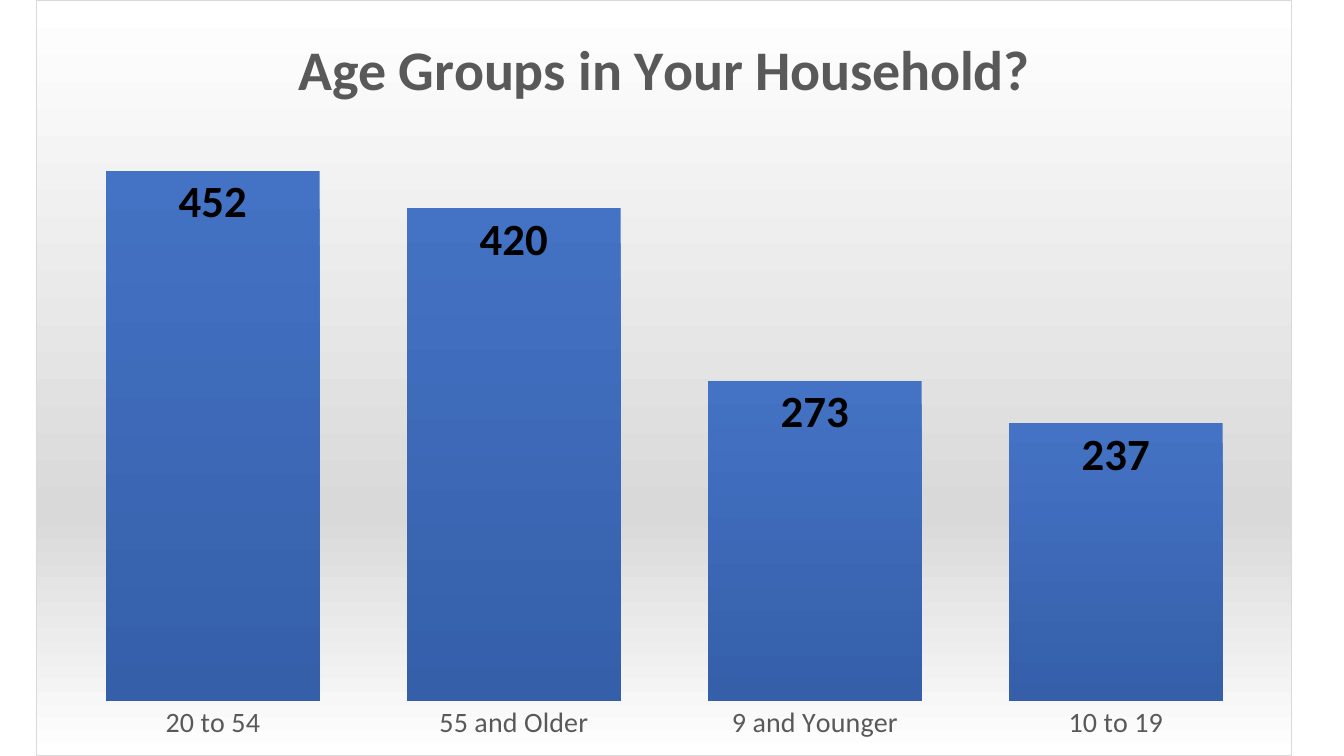
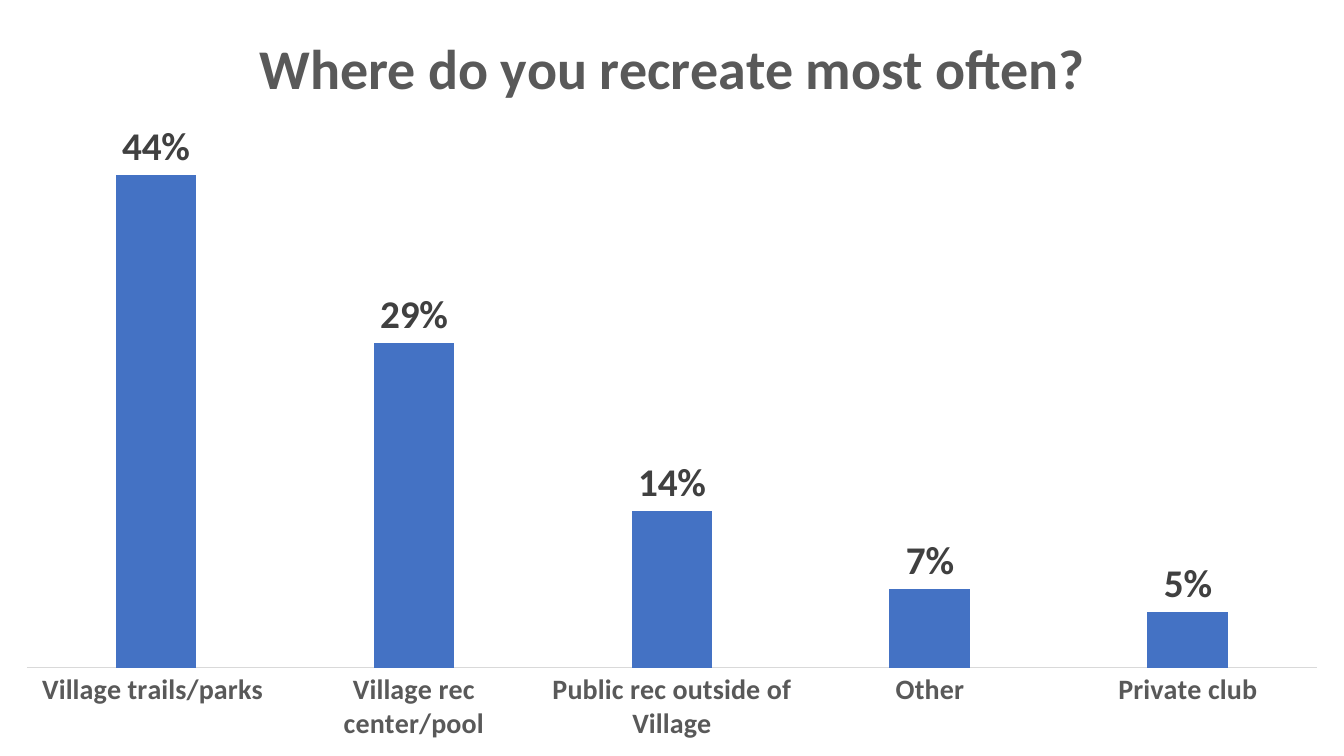
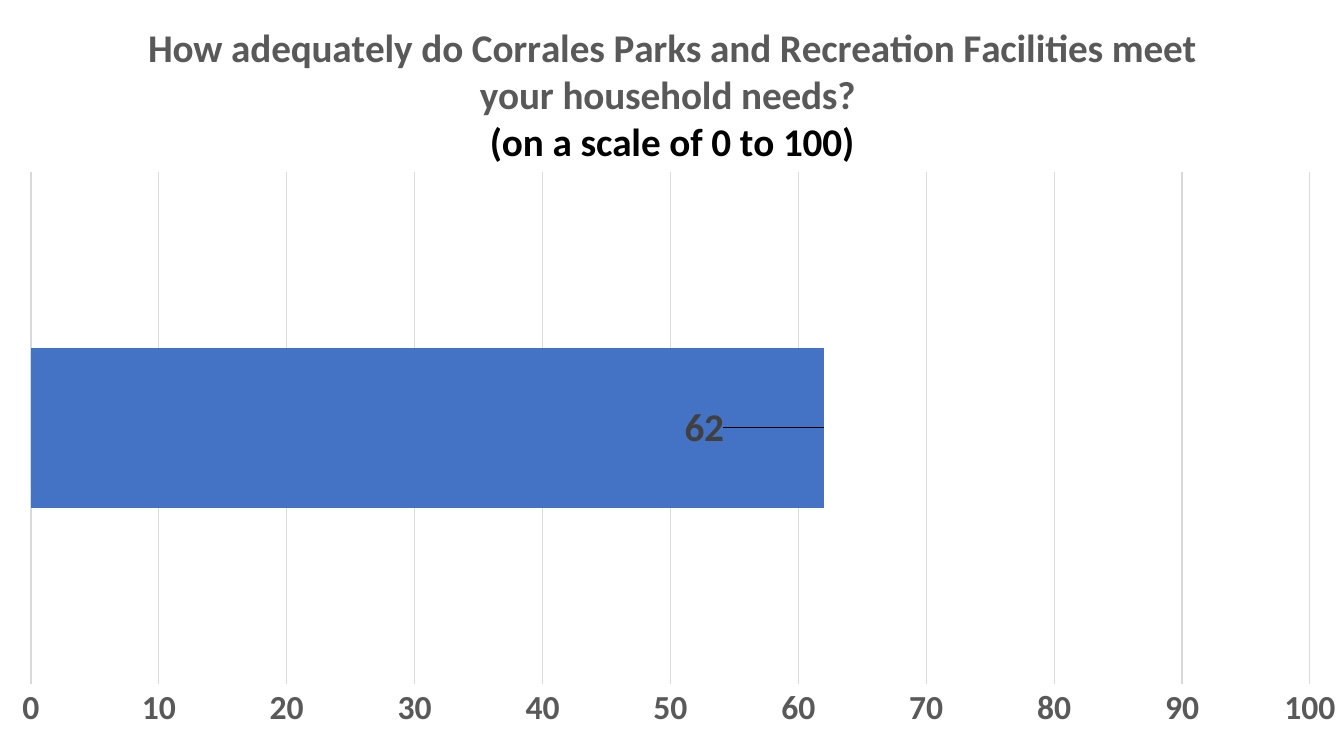
from lxml.etree import SubElement
from pptx import Presentation
from pptx.chart.data import CategoryChartData
from pptx.dml.color import RGBColor
from pptx.enum.chart import XL_CHART_TYPE, XL_LABEL_POSITION, XL_TICK_MARK
from pptx.oxml import parse_xml
from pptx.oxml.ns import nsdecls, qn
from pptx.util import Pt

SCALE = 914400 / 100.8
WIDTH, HEIGHT = 1344, 756
FONT = "Calibri"
COLOURS = {
    "bar": "4472C4",
    "bar_dark": "355FA9",
    "text": "595959",
    "label": "404040",
    "black": "000000",
    "rule": "D9D9D9",
    "white": "FFFFFF",
}
BAR_GRADIENT = [(0, "bar"), (100, "bar_dark")]
AREA_GRADIENT = [(0, "white"), (68, "rule"), (100, "white")]


def emu(px):
    return round(px * SCALE)


def colour(name):
    return RGBColor.from_string(COLOURS[name])


def assign(target, values):
    for name, value in values.items():
        setattr(target, name, value)


def style_font(font, size, colour_name, bold=True):
    assign(font, {"name": FONT, "size": Pt(size), "bold": bold})
    font.color.rgb = colour(colour_name)


def style_line(line, colour_name=None):
    if colour_name:
        line.color.rgb = colour(colour_name)
        line.width = Pt(0.75)
    else:
        line.fill.background()


def gradient(stops):
    marks = "".join(
        f'<a:gs pos="{position * 1000}"><a:srgbClr val="{COLOURS[name]}"/></a:gs>'
        for position, name in stops
    )
    return parse_xml(
        f'<a:gradFill {nsdecls("a")} rotWithShape="1"><a:gsLst>{marks}</a:gsLst>'
        '<a:lin ang="5400000" scaled="0"/></a:gradFill>'
    )


def manual_layout(values):
    layout = parse_xml(f'<c:layout {nsdecls("c")}><c:manualLayout/></c:layout>')
    for name, value in values.items():
        SubElement(layout[0], qn(f"c:{name}")).set("val", str(value))
    return layout


class SurveyDeck:
    def __init__(self):
        self.deck = Presentation()
        assign(self.deck, {"slide_width": emu(WIDTH), "slide_height": emu(HEIGHT)})
        self.slide = None
        self.chart = None

    def add_page(self):
        self.slide = self.deck.slides.add_slide(self.deck.slide_layouts[6])

    def add_bars(self, kind, answers, box, plot_box, gap, overlap=0, number_format="General"):
        data = CategoryChartData(number_format=number_format)
        data.categories = list(answers)
        data.add_series("Series 1", list(answers.values()))
        frame = self.slide.shapes.add_chart(kind, *map(emu, box), data)
        self.chart = frame.chart
        self.chart.has_legend = False
        style_font(self.chart.font, 10, "black", False)
        plot = self.chart.plots[0]
        assign(plot, {"gap_width": gap, "overlap": overlap, "vary_by_categories": False})
        series = plot.series[0]
        series.invert_if_negative = False
        assign(series.format.fill, {})
        series.format.fill.solid()
        series.format.fill.fore_color.rgb = colour("bar")
        self.place_plot(box, plot_box)
        self.clear_area()

    def place_plot(self, box, plot_box):
        left, top, width, height = box
        plot_left, plot_top, plot_width, plot_height = plot_box
        area = self.chart.element.find(qn("c:chart")).find(qn("c:plotArea"))
        for layout in area.findall(qn("c:layout")):
            area.remove(layout)
        area.insert(0, manual_layout({
            "layoutTarget": "inner",
            "xMode": "edge",
            "yMode": "edge",
            "x": (plot_left - left) / width,
            "y": (plot_top - top) / height,
            "w": plot_width / width,
            "h": plot_height / height,
        }))

    def clear_area(self):
        self.chart.element.find(qn("c:chart")).addnext(parse_xml(
            f'<c:spPr {nsdecls("c", "a")}><a:noFill/><a:ln><a:noFill/></a:ln></c:spPr>'
        ))

    def shade(self):
        series = self.chart.plots[0].series[0]
        series.format.fill.background()
        bar = next(self.chart.element.iter(qn("c:ser"))).find(qn("c:spPr"))
        area = self.chart.element.find(qn("c:spPr"))
        for part, stops in ((bar, BAR_GRADIENT), (area, AREA_GRADIENT)):
            part.replace(part.find(qn("a:noFill")), gradient(stops))
        area.replace(area.find(qn("a:ln")), parse_xml(
            f'<a:ln {nsdecls("a")} w="9525"><a:solidFill>'
            f'<a:srgbClr val="{COLOURS["rule"]}"/></a:solidFill></a:ln>'
        ))

    def add_title(self, size, *lines):
        title = self.chart.chart_title
        title.include_in_layout = False
        frame = title.text_frame
        for index, (text, colour_name) in enumerate(lines):
            para = frame.add_paragraph() if index else frame.paragraphs[0]
            span = para.add_run()
            span.text = text
            style_font(span.font, size, colour_name)

    def style_axis(self, axis, size, bold=True, line=None, number_format="General"):
        assign(axis, {
            "major_tick_mark": XL_TICK_MARK.NONE,
            "minor_tick_mark": XL_TICK_MARK.NONE,
        })
        assign(axis.tick_labels, {
            "number_format": number_format,
            "number_format_is_linked": False,
        })
        style_font(axis.tick_labels.font, size, "text", bold)
        style_line(axis.format.line, line)

    def set_scale(self, maximum, step, visible=False):
        axis = self.chart.value_axis
        assign(axis, {
            "minimum_scale": 0,
            "maximum_scale": maximum,
            "major_unit": step,
            "has_major_gridlines": visible,
            "visible": visible,
        })
        if visible:
            style_line(axis.major_gridlines.format.line, "rule")

    def add_labels(self, size, colour_name, position, number_format="General"):
        labels = self.chart.plots[0].series[0].data_labels
        assign(labels, {
            "show_value": True,
            "position": position,
            "number_format": number_format,
            "number_format_is_linked": False,
        })
        style_font(labels.font, size, colour_name)

    def shift_label(self, size, colour_name, position, offset):
        label = self.chart.plots[0].series[0].points[0].data_label
        style_font(label.font, size, colour_name)
        label.position = position
        mark = next(self.chart.element.iter(qn("c:dLbl")))
        mark.insert(1, manual_layout({"x": offset / WIDTH, "y": 0}))

    def age_page(self):
        self.add_page()
        answers = {"20 to 54": 452, "55 and Older": 420, "9 and Younger": 273, "10 to 19": 237}
        self.add_bars(XL_CHART_TYPE.COLUMN_CLUSTERED, answers,
                      (36, 0, 1256, HEIGHT), (62, 114, 1205, 588), 41)
        self.shade()
        self.add_title(40, ("Age Groups in Your Household?", "text"))
        self.style_axis(self.chart.category_axis, 20, False)
        self.set_scale(500, 100)
        self.add_labels(32, "black", XL_LABEL_POSITION.INSIDE_END)

    def place_page(self):
        self.add_page()
        answers = {
            "Village trails/parks ": 0.44,
            "Village rec center/pool": 0.29,
            "Public rec outside of Village": 0.14,
            "Other": 0.07,
            "Private club": 0.05,
        }
        self.add_bars(XL_CHART_TYPE.COLUMN_CLUSTERED, answers,
                      (0, 0, WIDTH, HEIGHT), (27, 108, 1290, 560), 219, -27, "0%")
        self.add_title(40, ("Where do you recreate most often?", "text"))
        self.style_axis(self.chart.category_axis, 20, line="rule")
        self.set_scale(0.5, 0.1)
        self.add_labels(28, "label", XL_LABEL_POSITION.OUTSIDE_END, "0%")

    def needs_page(self):
        self.add_page()
        self.add_bars(XL_CHART_TYPE.BAR_CLUSTERED, {"1": 62},
                      (0, 0, WIDTH, HEIGHT), (31, 172, 1279, 512), 219, number_format="0")
        self.add_title(
            28,
            ("How adequately do Corrales Parks and Recreation Facilities meet "
             "your household needs? ", "text"),
            ("(on a scale of 0 to 100)", "black"),
        )
        self.chart.category_axis.visible = False
        self.style_axis(self.chart.value_axis, 24, number_format="0")
        self.set_scale(100, 10, True)
        self.add_labels(28, "label", XL_LABEL_POSITION.INSIDE_END, "0")
        self.shift_label(28, "label", XL_LABEL_POSITION.INSIDE_END, -96)


def main():
    survey = SurveyDeck()
    survey.age_page()
    survey.place_page()
    survey.needs_page()
    survey.deck.save("out.pptx")


if __name__ == "__main__":
    main()
